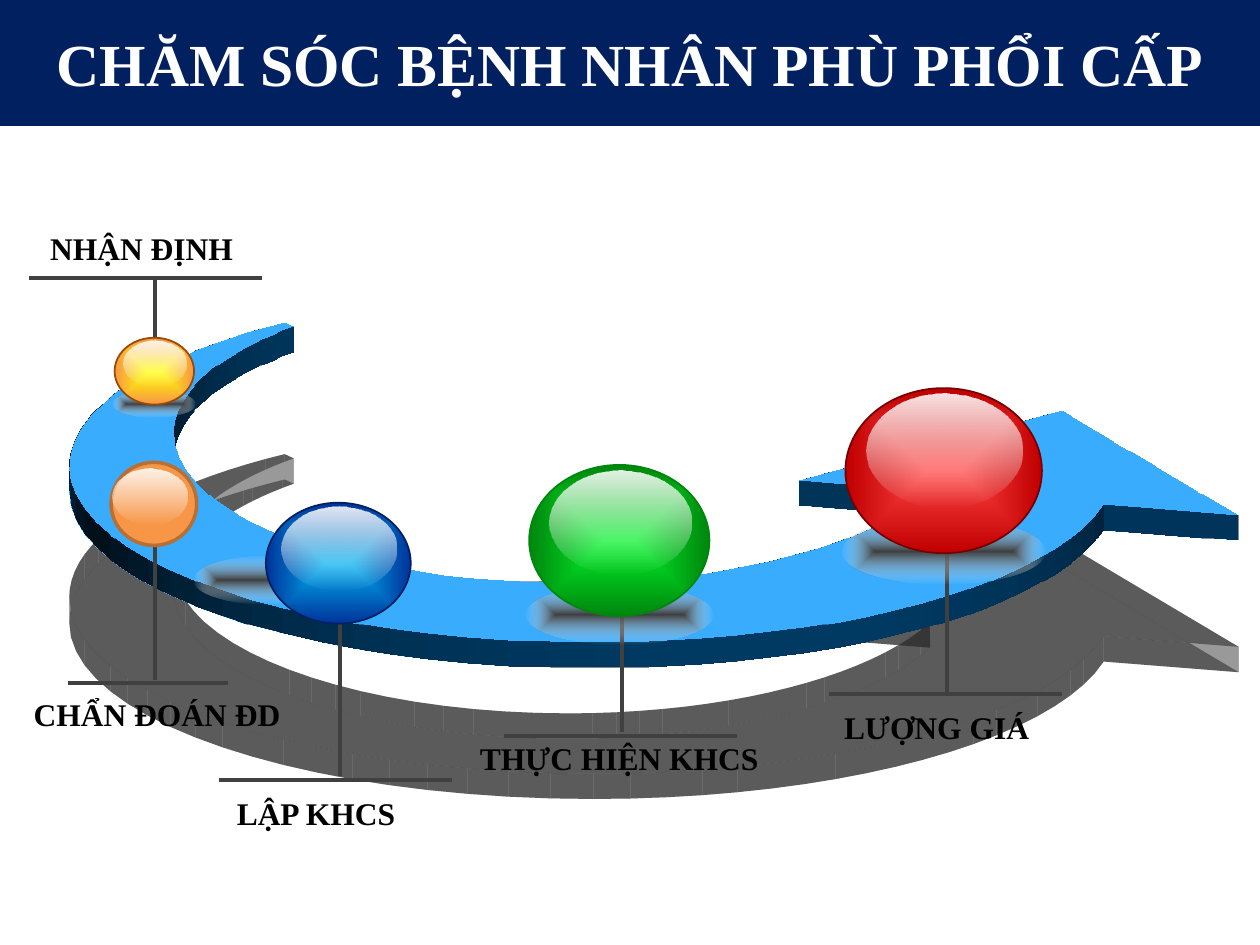
from dataclasses import dataclass
from typing import Optional

from lxml import etree
from pptx import Presentation
from pptx.dml.color import RGBColor
from pptx.enum import shapes, text
from pptx.oxml import ns
from pptx.util import Pt


@dataclass(frozen=True)
class Theme:
    font: str = "Times New Roman"
    title_size: float = 34.1
    label_size: float = 18
    banner: str = "002060"
    title: str = "FFFFFF"
    label: str = "000000"
    arrow: str = "0070C0"
    pin: str = "404040"
    light: str = "FFFFFF"
    pin_width: float = 2.25


@dataclass(frozen=True)
class Step:
    label: str
    label_box: tuple
    ball: tuple
    colors: tuple
    rim: str
    stem: tuple
    base: tuple
    shadow_at: Optional[tuple] = None
    rim_width: float = 1
    gloss: tuple = (0.11, 0.035, 0.79, 0.69)


THEME = Theme()

STEPS = [
    Step("NHẬN ĐỊNH", (21.6, 127.4, 120.2), (65.5, 193, 45.4, 38.2),
         ("FFFF00", "F79646"), "984807", (88.6, 204.5, 159), (16.6, 159, 133.2)),
    Step("LẬP KHCS", (128.2, 450, 107.3), (151.9, 287.3, 82.8, 69.1),
         ("00B0F0", "00339A"), "002060", (194.4, 326.9, 443.5), (125.3, 445.7, 133.2),
         shadow_at=(110.9, 317.5)),
    Step("THỰC HIỆN KHCS", (267.1, 419, 175.7), (302.4, 265.7, 103, 86.4),
         ("00F228", "00860D"), "00860D", (355.7, 304.6, 418.3), (288, 420.5, 133.2)),
    Step("LƯỢNG GIÁ", (475.2, 401, 121.7), (483.1, 221.8, 112.3, 94.3),
         ("FF4242", "C00000"), "760000", (541.4, 267.8, 395.3), (473.8, 396.7, 133.2)),
    Step("CHẨN ĐOÁN ĐD", (12.2, 393.8, 157), (63.4, 264.2, 49, 47.5),
         ("F79646",), "B76F34", (88.6, 292.3, 388.8), (38.9, 390.2, 91.4),
         rim_width=2, gloss=(0.02, 0.07, 0.87, 0.68)),
]

ARROW_START = (162.7, 59.8)
ARROW_OUTLINE = [
    [(167.8, 65.5)],
    [(125.3, 101.5), (99.4, 152.6), (99.4, 208.8)],
    [(99.4, 320.4), (200.2, 410.4), (324.7, 410.4)],
    [(417.6, 410.4), (498.2, 359.3), (531.4, 287.3)],
    [(456.5, 272.9)],
    [(607, 178.6)],
    [(707.8, 320.4)],
    [(630.7, 306)],
    [(601.2, 412.6), (481.7, 491.8), (339.1, 491.8)],
    [(173.5, 491.8), (39.6, 385.2), (39.6, 253.4)],
    [(39.6, 173.5), (87.8, 103), ARROW_START],
]

ARROW_SHADOW = """<a:outerShdw {ns} blurRad="266700" dist="952500" dir="5400000" algn="t"
    rotWithShape="0"><a:srgbClr val="000000"><a:alpha val="40000"/></a:srgbClr></a:outerShdw>"""
ARROW_SCENE = """<a:scene3d {ns}><a:camera prst="orthographicFront">
    <a:rot lat="17700000" lon="0" rev="0"/></a:camera>
    <a:lightRig rig="threePt" dir="t"/></a:scene3d>"""
ARROW_DEPTH = '<a:sp3d {ns} extrusionH="203200"/>'


def rgb(color):
    return RGBColor.from_string(color)


def drawing_xml(markup):
    return etree.fromstring(markup.replace("{ns}", ns.nsdecls("a")))


def bezier(start, controls, steps=20):
    points = [start, *controls]
    for step in range(1, steps + 1):
        t = step / steps
        weights = ((1 - t) ** 3, 3 * t * (1 - t) ** 2, 3 * t * t * (1 - t), t ** 3)
        yield tuple(sum(w * p[axis] for w, p in zip(weights, points)) for axis in (0, 1))


def add_arrow(slide):
    outline = [ARROW_START]
    for segment in ARROW_OUTLINE:
        outline.extend(segment if len(segment) == 1 else list(bezier(outline[-1], segment)))
    vertices = [(Pt(x), Pt(y)) for x, y in outline]
    builder = slide.shapes.build_freeform(*vertices[0])
    builder.add_line_segments(vertices[1:], close=True)
    arrow = builder.convert_to_shape()
    arrow.fill.solid()
    arrow.fill.fore_color.rgb = rgb(THEME.arrow)
    arrow.line.fill.background()
    arrow.shadow.inherit = False
    properties = arrow._element.spPr
    properties.find(ns.qn("a:effectLst")).append(drawing_xml(ARROW_SHADOW))
    properties.append(drawing_xml(ARROW_SCENE))
    properties.append(drawing_xml(ARROW_DEPTH))


def add_pin_line(slide, x1, y1, x2, y2):
    line = slide.shapes.add_connector(
        shapes.MSO_CONNECTOR.STRAIGHT, Pt(x1), Pt(y1), Pt(x2), Pt(y2))
    line.line.color.rgb = rgb(THEME.pin)
    line.line.width = Pt(THEME.pin_width)
    line._element.spPr.append(drawing_xml("<a:effectLst {ns}/>"))


def add_solid(slide, kind, box, color=None):
    solid = slide.shapes.add_shape(kind, *(Pt(length) for length in box))
    solid.shadow.inherit = False
    solid.line.fill.background()
    if color:
        solid.fill.solid()
        solid.fill.fore_color.rgb = rgb(color)
    return solid


def add_gradient_oval(slide, box, first, last, radial=True):
    oval = add_solid(slide, shapes.MSO_SHAPE.OVAL, box)
    stops = "".join(
        f'<a:gs pos="{pos}"><a:srgbClr val="{color}"><a:alpha val="{alpha * 1000}"/>'
        "</a:srgbClr></a:gs>"
        for pos, (color, alpha) in ((0, first), (100000, last)))
    direction = (
        '<a:path path="shape"><a:fillToRect l="50000" t="50000" r="50000" b="50000"/></a:path>'
        if radial else '<a:lin ang="5400000" scaled="1"/>')
    oval._element.spPr.insert(
        2, drawing_xml(f"<a:gradFill {{ns}}><a:gsLst>{stops}</a:gsLst>{direction}</a:gradFill>"))
    return oval


def add_ball(slide, step):
    left, top, width, height = step.ball
    if len(step.colors) == 1:
        ball = add_solid(slide, shapes.MSO_SHAPE.OVAL, step.ball, step.colors[0])
    else:
        shadow_at = step.shadow_at or (left - 0.02 * width, top + 0.79 * height)
        add_gradient_oval(slide, (*shadow_at, 1.04 * width, 0.4 * height),
                          (THEME.pin, 100), (THEME.light, 0))
        inner, outer = step.colors
        ball = add_gradient_oval(slide, step.ball, (inner, 100), (outer, 100))
    ball.line.color.rgb = rgb(step.rim)
    ball.line.width = Pt(step.rim_width)
    dx, dy, wide, high = step.gloss
    add_gradient_oval(slide, (left + dx * width, top + dy * height, wide * width, high * height),
                      (THEME.light, 90), (THEME.light, 0), radial=False)


def write(frame, words, size, color):
    paragraph = frame.paragraphs[0]
    paragraph.text = words
    paragraph.font.name = THEME.font
    paragraph.font.size = Pt(size)
    paragraph.font.bold = True
    paragraph.font.color.rgb = rgb(color)
    return paragraph


def add_label(slide, step):
    left, top, width = step.label_box
    frame = slide.shapes.add_textbox(Pt(left), Pt(top), Pt(width), Pt(29)).text_frame
    frame.word_wrap = False
    frame.auto_size = text.MSO_AUTO_SIZE.SHAPE_TO_FIT_TEXT
    write(frame, step.label, THEME.label_size, THEME.label)


def add_step(slide, step):
    x, start, end = step.stem
    left, y, width = step.base
    add_pin_line(slide, x, start, x, end)
    add_pin_line(slide, left, y, left + width, y)
    add_ball(slide, step)
    add_label(slide, step)


def add_title(slide):
    banner = add_solid(slide, shapes.MSO_SHAPE.RECTANGLE, (0, 0, 720, 72), THEME.banner)
    frame = banner.text_frame
    frame.word_wrap = True
    frame.vertical_anchor = text.MSO_ANCHOR.MIDDLE
    title = write(frame, "CHĂM SÓC BỆNH NHÂN PHÙ PHỔI CẤP", THEME.title_size, THEME.title)
    title.alignment = text.PP_ALIGN.CENTER


def main():
    deck = Presentation()
    deck.slide_width, deck.slide_height = Pt(720), Pt(540)
    slide = deck.slides.add_slide(deck.slide_layouts[6])
    add_arrow(slide)
    for step in STEPS:
        add_step(slide, step)
    add_title(slide)
    deck.save("out.pptx")


if __name__ == "__main__":
    main()
